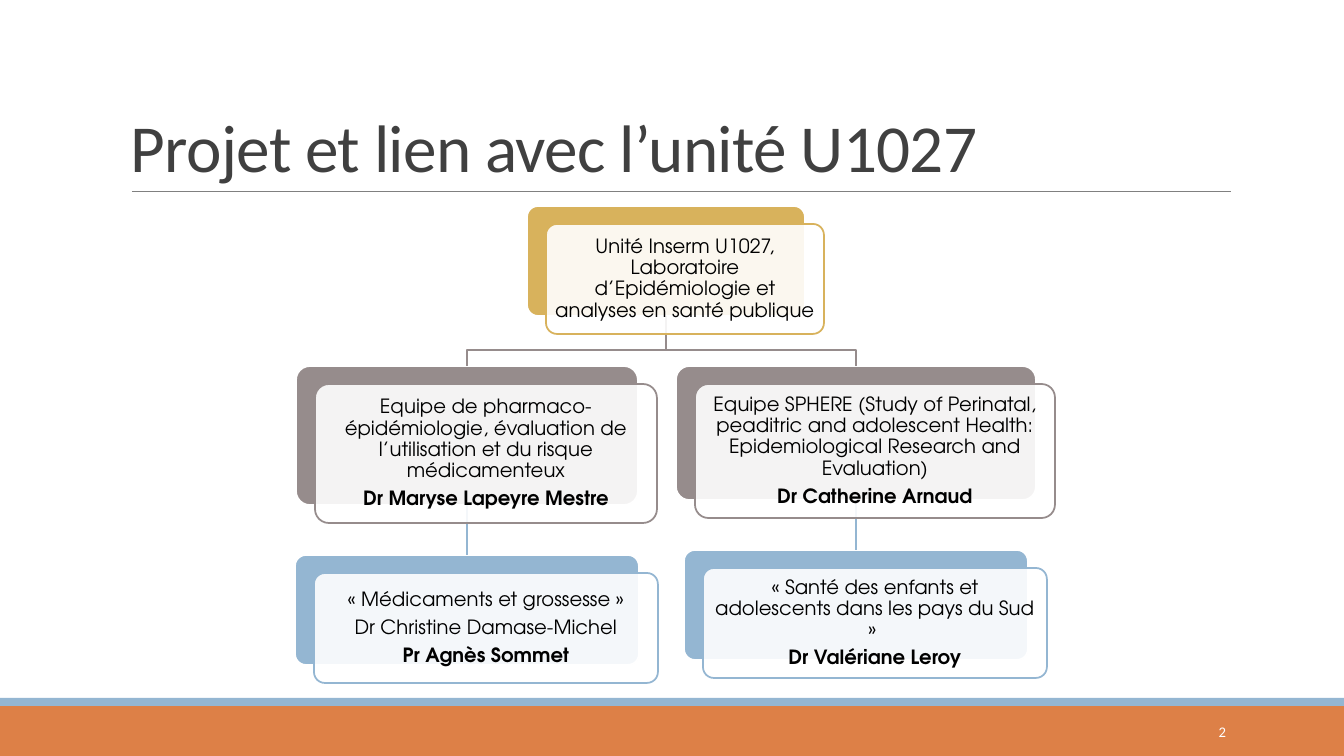
from pptx import Presentation
from pptx.dml.color import RGBColor
from pptx.enum.shapes import MSO_CONNECTOR, MSO_SHAPE
from pptx.enum.text import MSO_ANCHOR, PP_ALIGN
from pptx.oxml.ns import qn
from pptx.util import Pt
from lxml import etree

RECT, ROUND = MSO_SHAPE.RECTANGLE, MSO_SHAPE.ROUNDED_RECTANGLE
STRAIGHT = MSO_CONNECTOR.STRAIGHT
LEFT, CENTER, RIGHT = PP_ALIGN.LEFT, PP_ALIGN.CENTER, PP_ALIGN.RIGHT
MIDDLE, BOTTOM = MSO_ANCHOR.MIDDLE, MSO_ANCHOR.BOTTOM
TOP_SIDE, BOTTOM_SIDE = 0, 2

ORANGE, BLUE, GOLD, TAUPE = "DD8047", "94B6D2", "D8B25C", "968C8C"
WHITE, BLACK, DARK, GREY = "FFFFFF", "000000", "404040", "808080"
HEAD_FONT, CARD_FONT = "Calibri", "TeX Gyre Adventor"
SHIFT_X, SHIFT_Y = 19, 18  # front card relative to its back card


def px(n):
    return round(n * 914400 / 100.8)


def rgb(value):
    return RGBColor.from_string(value)


def write(tf, lines, font=CARD_FONT, size=14, color=BLACK, align=CENTER,
          anchor=MIDDLE, inset=(6, 6), spacing=None, after=0, track=0,
          bold_last=False):
    tf.word_wrap = True
    tf.vertical_anchor = anchor
    tf.margin_left = tf.margin_right = px(inset[0])
    tf.margin_top = tf.margin_bottom = px(inset[1])
    for i, text in enumerate(lines):
        p = tf.add_paragraph() if i else tf.paragraphs[0]
        p.alignment = align
        p.line_spacing = spacing
        p.space_after = Pt(after)
        r = p.add_run()
        r.text = text
        r.font.name, r.font.size = font, Pt(size)
        r.font.color.rgb = rgb(color)
        r.font.bold = bold_last and i == len(lines) - 1
        if track:
            r.font._element.set("spc", str(track))


class Slide:
    def __init__(self, prs):
        self.s = prs.slides.add_slide(prs.slide_layouts[6])
        self.line_width = 1.25

    def box(self, x, y, w, h, fill, line=None, kind=RECT, alpha=None):
        sp = self.s.shapes.add_shape(kind, px(x), px(y), px(w), px(h))
        sp.shadow.inherit = False
        sp.fill.solid()
        sp.fill.fore_color.rgb = rgb(fill)
        if alpha:
            clr = sp._element.spPr.find(qn("a:solidFill"))[0]
            etree.SubElement(clr, qn("a:alpha")).set("val", str(alpha * 1000))
        if line:
            self.stroke(sp, line)
        else:
            sp.line.fill.background()
        if kind == ROUND:
            sp.adjustments[0] = 0.1
        return sp

    def stroke(self, sp, color, width=None):
        sp.line.color.rgb = rgb(color)
        sp.line.width = Pt(width or self.line_width)

    def text(self, x, y, w, h, lines, **style):
        sp = self.s.shapes.add_textbox(px(x), px(y), px(w), px(h))
        write(sp.text_frame, lines, **style)

    def line(self, x1, y1, x2, y2, color, width=None):
        c = self.s.shapes.add_connector(STRAIGHT, px(x1), px(y1), px(x2), px(y2))
        self.stroke(c, color, width)
        etree.SubElement(c._element.spPr, qn("a:effectLst"))
        return c

    def link(self, upper, lower, color):
        c = self.line(0, 0, 1, 1, color)
        c.begin_connect(upper, BOTTOM_SIDE)
        c.end_connect(lower, TOP_SIDE)

    def elbow(self, points, color):
        pts = [(px(x), px(y)) for x, y in points]
        fb = self.s.shapes.build_freeform(*pts[0])
        fb.add_line_segments(pts[1:], close=False)
        sp = fb.convert_to_shape()
        sp.shadow.inherit = False
        sp.fill.background()
        self.stroke(sp, color)


# name: (left, top, width, height, colour, lines, last line bold)
CARDS = {
    "unit": (527, 206, 278, 110, GOLD, [
        "Unité Inserm U1027, Laboratoire d’Epidémiologie et analyses en santé publique"], False),
    "pharma": (296, 366, 342, 139, TAUPE, [
        "Equipe de pharmaco-épidémiologie, évaluation de l’utilisation et du risque médicamenteux",
        "Dr Maryse Lapeyre Mestre"], True),
    "pregnancy": (295, 555, 344, 110, BLUE, [
        "« Médicaments et grossesse »",
        "Dr Christine Damase-Michel",
        "Pr Agnès Sommet"], True),
    "sphere": (676, 366, 360, 134, TAUPE, [
        "Equipe SPHERE (Study of Perinatal, peaditric and adolescent Health: "
        "Epidemiological Research and Evaluation)",
        "Dr Catherine Arnaud"], True),
    "children": (684, 550, 344, 110, BLUE, [
        "« Santé des enfants et adolescents dans les pays du Sud » ",
        "Dr Valériane Leroy"], True),
}


def main():
    prs = Presentation()
    prs.slide_width, prs.slide_height = px(1344), px(756)
    slide = Slide(prs)

    # Footer bands, title and page number
    slide.box(0, 706, 1344, 50, ORANGE)
    slide.box(0, 698, 1344, 8, BLUE)
    slide.line(132, 191, 1231, 191, GREY, 0.5)
    slide.text(121, 31, 1109, 160, ["Projet et lien avec l’unité U1027"],
               font=HEAD_FONT, size=48, color=DARK, align=LEFT, anchor=BOTTOM,
               inset=(10, 5), spacing=0.85, track=-50)
    slide.text(1092, 712, 144, 40, ["2"], font=HEAD_FONT, size=10.5,
               color=WHITE, align=RIGHT, inset=(10, 5))

    # Back cards
    backs = {name: slide.box(x, y, w, h, color, WHITE, ROUND)
             for name, (x, y, w, h, color, _, _) in CARDS.items()}

    # Links between levels
    x, y, w, h = CARDS["unit"][:4]
    start_x, start_y, bend_y = x + w / 2, y + h, 350
    for team, project in (("pharma", "pregnancy"), ("sphere", "children")):
        x, y, w = CARDS[team][:3]
        end_x = x + w / 2
        slide.elbow([(start_x, start_y), (start_x, bend_y),
                     (end_x, bend_y), (end_x, y)], TAUPE)
        slide.link(backs[team], backs[project], BLUE)

    # Front cards with text
    for x, y, w, h, color, lines, bold_last in CARDS.values():
        sp = slide.box(x + SHIFT_X, y + SHIFT_Y, w, h, WHITE, color, ROUND, alpha=90)
        write(sp.text_frame, lines, spacing=0.9, after=5, bold_last=bold_last)

    prs.save("out.pptx")


if __name__ == "__main__":
    main()
